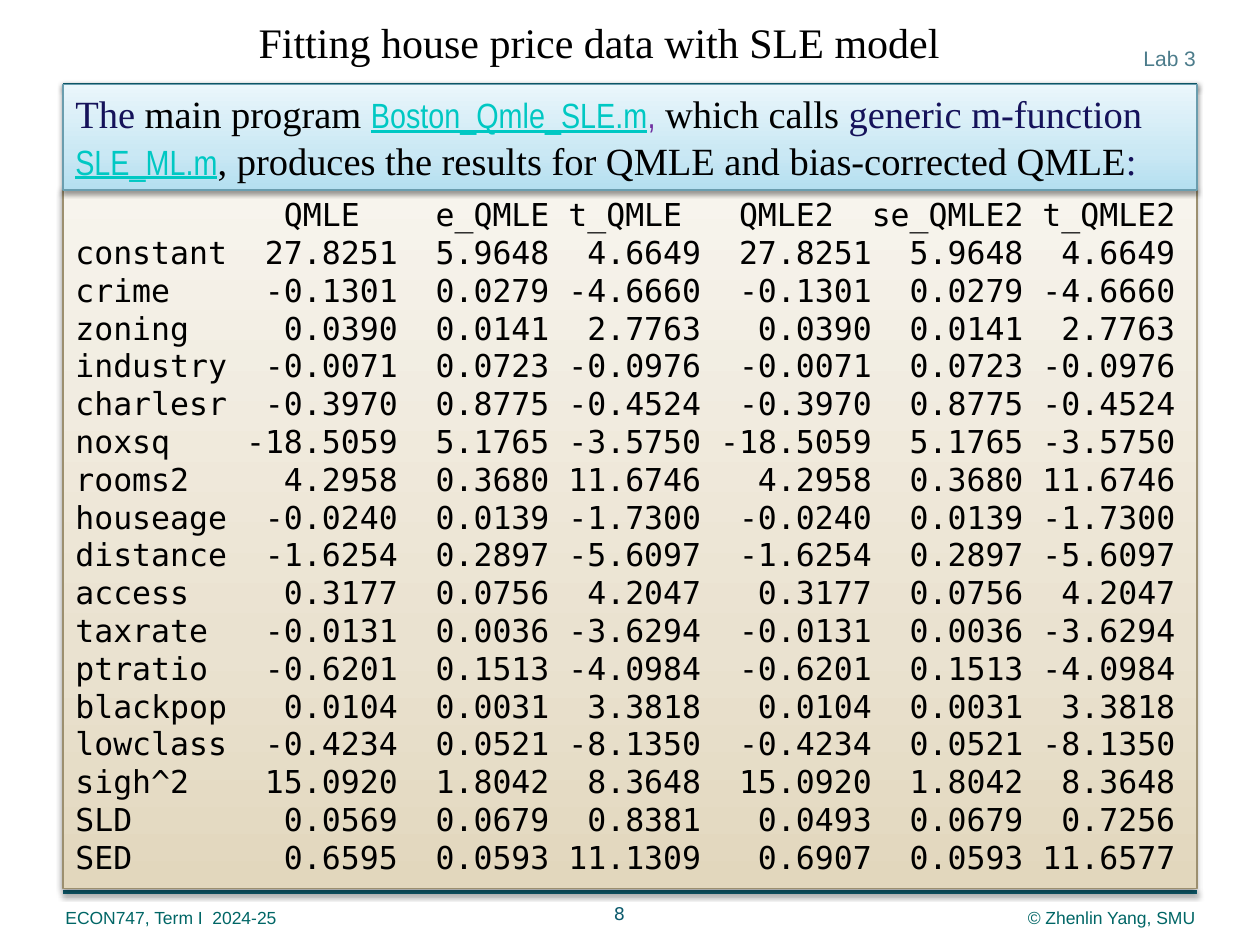
from dataclasses import dataclass

from lxml.etree import SubElement
from pptx import Presentation
from pptx.dml.color import RGBColor
from pptx.enum.shapes import MSO_CONNECTOR, MSO_SHAPE
from pptx.enum.text import MSO_ANCHOR as Anchor, PP_ALIGN as Align
from pptx.oxml.ns import qn
from pptx.util import Cm, Pt

BLACK = RGBColor(0x00, 0x00, 0x00)
NAVY = RGBColor(0x15, 0x12, 0x5A)
PURPLE = RGBColor(0x70, 0x30, 0xA0)
AQUA = RGBColor(0x00, 0xC8, 0xC3)
TEAL = RGBColor(0x0D, 0x5B, 0x6D)
GREEN = RGBColor(0x00, 0x66, 0x66)
SLATE = RGBColor(0x4C, 0x7C, 0x8B)
SAND = (RGBColor(0xE2, 0xD7, 0xBD), RGBColor(0xEA, 0xE2, 0xD0), RGBColor(0xF7, 0xF4, 0xED))
SAND_EDGE = RGBColor(0x9C, 0x8F, 0x6F)
SKY = (RGBColor(0xB4, 0xDF, 0xF0), RGBColor(0xCA, 0xE8, 0xF4), RGBColor(0xEA, 0xF6, 0xFB))
SKY_EDGE = RGBColor(0x6A, 0x9D, 0xAE)

SERIF, NARROW, MONO = "Times New Roman", "Arial Narrow", "DejaVu Sans Mono"
LEFT, WIDTH = 1.27, 22.86
CHAR_WIDTH = Pt(18 * 0.602)
HEADINGS = ("", "QMLE", "e_QMLE", "t_QMLE", "QMLE2", "se_QMLE2", "t_QMLE2")
HEADING_ENDS = (15, 25, 32, 40, 50, 58)
VALUE_ENDS = (17, 25, 33, 42, 50, 58)


@dataclass
class Label:
    text: str
    left: float
    top: float
    width: float
    height: float
    size: float
    font: str
    color: RGBColor
    align: Align
    anchor: Anchor = Anchor.TOP


@dataclass
class Panel:
    top: float
    height: float
    gradient: tuple[RGBColor, ...]
    edge: RGBColor


@dataclass
class Phrase:
    text: str
    color: RGBColor = BLACK
    size: float = 22
    font: str = SERIF
    underline: bool = False


@dataclass
class Estimate:
    name: str
    qmle: str
    error: str
    ratio: str
    corrected: str = ""
    corrected_ratio: str = ""

    def cells(self) -> tuple[str, ...]:
        return (self.name, self.qmle, self.error, self.ratio,
                self.corrected or self.qmle, self.error,
                self.corrected_ratio or self.ratio)


LABELS = [
    Label("Lab 3", 22.66, 0.79, 1.7, 0.76, 12, "Arial", SLATE, Align.RIGHT),
    Label("ECON747, Term I  2024-25", 1.07, 18.16, 5.92, 0.69, 10, "Arial", GREEN, Align.LEFT),
    Label("© Zhenlin Yang, SMU", 18.42, 18.16, 5.92, 0.69, 10, "Arial", GREEN, Align.RIGHT),
    Label("Fitting house price data with SLE model", 3.61, 0.2, 16.94, 1.27, 24, SERIF,
          BLACK, Align.CENTER, Anchor.MIDDLE),
    Label("8", 9.53, 18.08, 5.92, 0.76, 10, "DejaVu Sans", TEAL, Align.CENTER),
]
RESULTS = Panel(3.81, 14.1, SAND, SAND_EDGE)
SUMMARY = Panel(1.7, 2.13, SKY, SKY_EDGE)
PHRASES = [
    Phrase("The ", NAVY),
    Phrase("main program "),
    Phrase("Boston_Qmle_SLE.m", AQUA, 20, NARROW, True),
    Phrase(",", PURPLE, 20, NARROW),
    Phrase(" which calls "),
    Phrase("generic m-function ", NAVY),
    Phrase("SLE_ML.m", AQUA, 20, NARROW, True),
    Phrase(", produces the results for QMLE and bias-corrected QMLE"),
    Phrase(":", NAVY),
]
ESTIMATES = [
    Estimate("constant", "27.8251", "5.9648", "4.6649"),
    Estimate("crime", "-0.1301", "0.0279", "-4.6660"),
    Estimate("zoning", "0.0390", "0.0141", "2.7763"),
    Estimate("industry", "-0.0071", "0.0723", "-0.0976"),
    Estimate("charlesr", "-0.3970", "0.8775", "-0.4524"),
    Estimate("noxsq", "-18.5059", "5.1765", "-3.5750"),
    Estimate("rooms2", "4.2958", "0.3680", "11.6746"),
    Estimate("houseage", "-0.0240", "0.0139", "-1.7300"),
    Estimate("distance", "-1.6254", "0.2897", "-5.6097"),
    Estimate("access", "0.3177", "0.0756", "4.2047"),
    Estimate("taxrate", "-0.0131", "0.0036", "-3.6294"),
    Estimate("ptratio", "-0.6201", "0.1513", "-4.0984"),
    Estimate("blackpop", "0.0104", "0.0031", "3.3818"),
    Estimate("lowclass", "-0.4234", "0.0521", "-8.1350"),
    Estimate("sigh^2", "15.0920", "1.8042", "8.3648"),
    Estimate("SLD", "0.0569", "0.0679", "0.8381", "0.0493", "0.7256"),
    Estimate("SED", "0.6595", "0.0593", "11.1309", "0.6907", "11.6577"),
]


def style(font, size: float, name: str, color: RGBColor) -> None:
    font.size = Pt(size)
    font.name = name
    font.color.rgb = color


def add_shadow(properties) -> None:
    effects = SubElement(properties, qn("a:effectLst"))
    shadow = SubElement(effects, qn("a:outerShdw"), blurRad=str(Pt(3.1)), dist=str(Pt(1.6)),
                        dir="5400000", rotWithShape="0")
    black = SubElement(shadow, qn("a:srgbClr"), val=str(BLACK))
    SubElement(black, qn("a:alpha"), val="38000")


def add_rule(slide, y: float) -> None:
    rule = slide.shapes.add_connector(MSO_CONNECTOR.STRAIGHT, Cm(LEFT), Cm(y),
                                      Cm(LEFT + WIDTH), Cm(y))
    rule.line.color.rgb = TEAL
    rule.line.width = Pt(2)
    add_shadow(rule._element.spPr)


def add_label(slide, label: Label) -> None:
    box = slide.shapes.add_textbox(Cm(label.left), Cm(label.top), Cm(label.width), Cm(label.height))
    frame = box.text_frame
    frame.word_wrap = True
    frame.vertical_anchor = label.anchor
    paragraph = frame.paragraphs[0]
    paragraph.text = label.text
    paragraph.alignment = label.align
    style(paragraph.font, label.size, label.font, label.color)


def add_panel(slide, panel: Panel):
    box = slide.shapes.add_shape(MSO_SHAPE.RECTANGLE, Cm(LEFT), Cm(panel.top),
                                 Cm(WIDTH), Cm(panel.height))
    box.fill.gradient()
    box.fill.gradient_angle = 90
    stops = box._element.spPr.find(f".//{qn('a:gsLst')}")
    stops.clear()
    for position, color in zip((0, 35, 100), panel.gradient):
        stop = SubElement(stops, qn("a:gs"), pos=str(position * 1000))
        SubElement(stop, qn("a:srgbClr"), val=str(color))
    box.line.color.rgb = panel.edge
    box.line.width = Pt(0.75)
    add_shadow(box._element.spPr)
    box.text_frame.word_wrap = True
    box.text_frame.vertical_anchor = Anchor.TOP
    return box.text_frame


def write_row(paragraph, cells: tuple[str, ...], ends: tuple[int, ...]) -> None:
    paragraph.text = "\t".join(cells)
    paragraph.alignment = Align.LEFT
    tabs = SubElement(paragraph._p.get_or_add_pPr(), qn("a:tabLst"))
    for end in ends:
        SubElement(tabs, qn("a:tab"), pos=str(end * CHAR_WIDTH), algn="r")
    style(paragraph.font, 18, MONO, BLACK)


def main() -> None:
    deck = Presentation()
    deck.slide_width, deck.slide_height = Cm(25.4), Cm(19.05)
    slide = deck.slides.add_slide(deck.slide_layouts[6])
    for y in (17.98, 1.7):
        add_rule(slide, y)

    results = add_panel(slide, RESULTS)
    write_row(results.paragraphs[0], HEADINGS, HEADING_ENDS)
    for estimate in ESTIMATES:
        write_row(results.add_paragraph(), estimate.cells(), VALUE_ENDS)

    summary = add_panel(slide, SUMMARY).paragraphs[0]
    summary.alignment = Align.LEFT
    summary.space_before = Pt(6)
    for phrase in PHRASES:
        run = summary.add_run()
        run.text = phrase.text
        style(run.font, phrase.size, phrase.font, phrase.color)
        run.font.underline = phrase.underline

    for label in LABELS:
        add_label(slide, label)
    deck.save("out.pptx")


if __name__ == "__main__":
    main()
